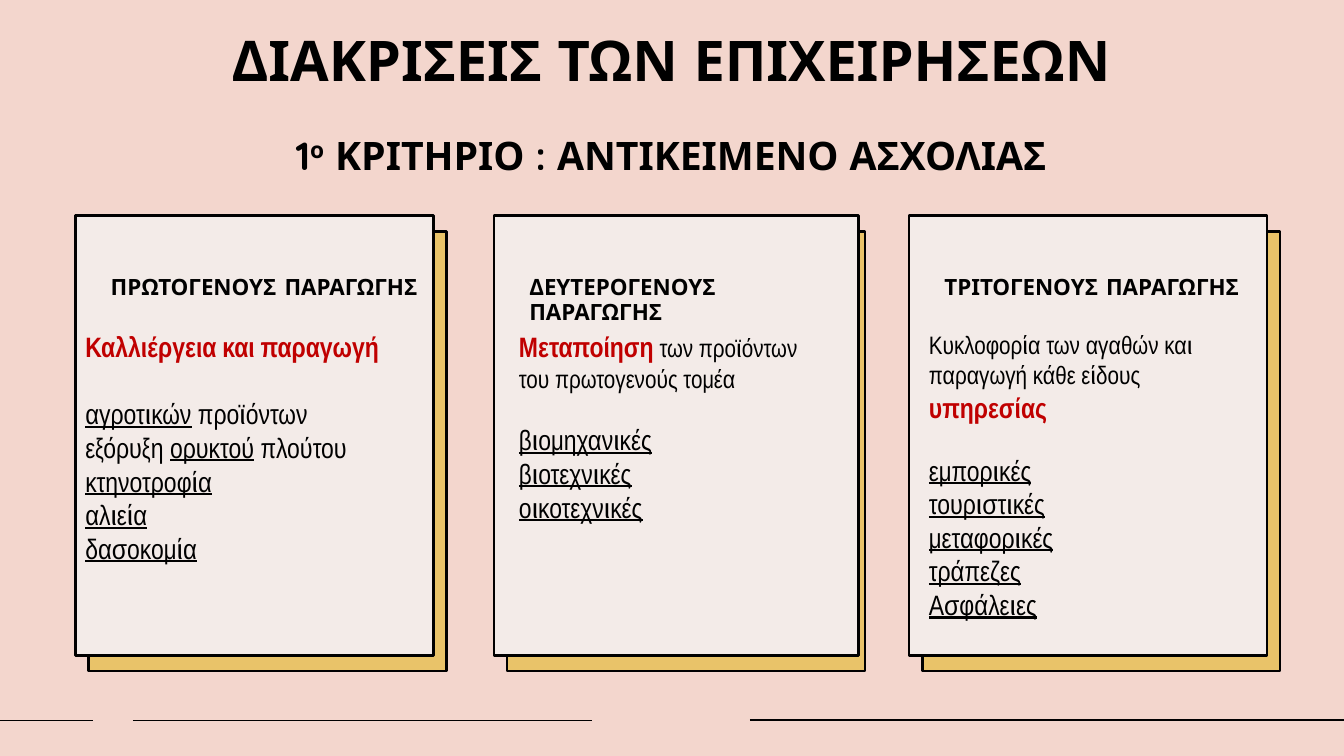
from dataclasses import dataclass

from lxml.etree import SubElement
from pptx import Presentation
from pptx.dml.color import RGBColor
from pptx.enum.shapes import MSO_CONNECTOR as Connector, MSO_SHAPE as Shape
from pptx.enum.text import MSO_ANCHOR as Anchor, PP_ALIGN as Align
from pptx.oxml.ns import qn
from pptx.util import Cm, Pt


@dataclass(frozen=True)
class Theme:
    background: str = "F3D6CD"
    panel: str = "F3EBE8"
    backing: str = "E9C369"
    ink: str = "000000"
    accent: str = "C00000"
    heading_font: str = "Quicksand"
    body_font: str = "Arial Narrow"
    title_size: int = 40
    criterion_size: int = 28
    heading_size: int = 16
    space_size: int = 20
    large: int = 20
    small: int = 18
    border: int = 2
    rule: int = 1


@dataclass(frozen=True)
class Span:
    text: str
    size: int
    color: str
    font: str
    bold: bool = False
    underline: bool = False
    baseline: int = 0


@dataclass(frozen=True)
class Box:
    left: float
    top: float
    width: float
    height: float

    def lengths(self) -> tuple:
        return Cm(self.left), Cm(self.top), Cm(self.width), Cm(self.height)


@dataclass(frozen=True)
class Sector:
    name: str
    backing_left: float
    panel_left: float
    panel_width: float
    body_left: float
    body_width: float
    activity: list[Span]
    examples: list[list[Span]]
    gap: int


@dataclass(frozen=True)
class Rule:
    start: float
    end: float
    height: float


THEME = Theme()


def heading(text: str, size: int, baseline: int = 0) -> Span:
    return Span(text, size, THEME.ink, THEME.heading_font, True, False, baseline)


def plain(text: str, size: int = THEME.large) -> Span:
    return Span(text, size, THEME.ink, THEME.body_font)


def key(text: str) -> Span:
    return Span(text, THEME.large, THEME.accent, THEME.body_font, bold=True)


def example(text: str) -> Span:
    return Span(text, THEME.large, THEME.ink, THEME.body_font, underline=True)


def write(paragraph, spans: list[Span]) -> None:
    for span in spans:
        run = paragraph.add_run()
        run.text = span.text
        font = run.font
        font.name = span.font
        font.size = Pt(span.size)
        font.bold = span.bold
        font.underline = span.underline
        font.color.rgb = RGBColor.from_string(span.color)
        if span.baseline:
            run._r.get_or_add_rPr().set("baseline", str(span.baseline * 1000))


def add_text(slide, box: Box, lines: list[list[Span]], align=Align.LEFT, gap: int = 0) -> None:
    frame = slide.shapes.add_textbox(*box.lengths()).text_frame
    frame.word_wrap = True
    for index, spans in enumerate(lines):
        paragraph = frame.add_paragraph() if index else frame.paragraphs[0]
        paragraph.alignment = align
        if index == 1:
            paragraph.space_before = Pt(gap)
        write(paragraph, spans)


def add_card(slide, box: Box, fill: str):
    card = slide.shapes.add_shape(Shape.RECTANGLE, *box.lengths())
    card.shadow.inherit = False
    card.fill.solid()
    card.fill.fore_color.rgb = RGBColor.from_string(fill)
    card.line.color.rgb = RGBColor.from_string(THEME.ink)
    card.line.width = Pt(THEME.border)
    return card


def add_rule(slide, rule: Rule) -> None:
    line = slide.shapes.add_connector(
        Connector.STRAIGHT, Cm(rule.start), Cm(rule.height), Cm(rule.end), Cm(rule.height))
    line.line.color.rgb = RGBColor.from_string(THEME.ink)
    line.line.width = Pt(THEME.rule)
    SubElement(line._element.spPr, qn("a:effectLst"))


def add_sector(slide, sector: Sector) -> None:
    add_card(slide, Box(sector.backing_left, 5.84, 9.02, 11.07), THEME.backing)
    panel = add_card(slide, Box(sector.panel_left, 5.44, sector.panel_width, 11.07), THEME.panel)
    frame = panel.text_frame
    frame.word_wrap = True
    frame.vertical_anchor = Anchor.TOP
    frame.margin_left, frame.margin_top = Cm(0.89), Cm(1.4)
    frame.margin_right, frame.margin_bottom = Cm(0.25), Cm(0.13)
    title = frame.paragraphs[0]
    title.alignment = Align.LEFT
    title.line_spacing = 0.9
    write(title, [heading(sector.name, THEME.heading_size),
                  heading(" ", THEME.space_size),
                  heading("ΠΑΡΑΓΩΓΗΣ", THEME.heading_size)])
    add_text(slide, Box(sector.body_left, 8.18, sector.body_width, 7.75),
             [sector.activity, *sector.examples], gap=sector.gap)


RULES = [Rule(0, 2.34, 18.16), Rule(3.35, 14.91, 18.16), Rule(18.9, 33.87, 18.14)]

SECTORS = [
    Sector("ΠΡΩΤΟΓΕΝΟΥΣ", 2.24, 1.9, 9.02, 1.9, 9.27,
           [key("Καλλιέργεια"), plain(" ", THEME.small), key("και"),
            plain(" ", THEME.small), key("παραγωγή")],
           [[example("αγροτικών"), plain(" προϊόντων")],
            [plain("εξόρυξη "), example("ορυκτού"), plain(" πλούτου")],
            *[[example(name)] for name in ("κτηνοτροφία", "αλιεία", "δασοκομία")]],
           24),
    Sector("ΔΕΥΤΕΡΟΓΕΝΟΥΣ", 12.78, 12.45, 9.19, 12.83, 8.38,
           [key("Μεταποίηση"),
            plain(" των προϊόντων του πρωτογενούς τομέα", THEME.small)],
           [[example(name)] for name in ("βιομηχανικές", "βιοτεχνικές", "οικοτεχνικές")],
           21),
    Sector("ΤΡΙΤΟΓΕΝΟΥΣ", 23.24, 22.91, 9.02, 23.16, 8.43,
           [plain("Κυκλοφορία των αγαθών και παραγωγή κάθε είδους ", THEME.small),
            key("υπηρεσίας")],
           [[example(name)] for name in
            ("εμπορικές", "τουριστικές", "μεταφορικές", "τράπεζες", "Ασφάλειες")],
           21),
]


def main() -> None:
    deck = Presentation()
    deck.slide_width, deck.slide_height = Cm(33.87), Cm(19.05)
    slide = deck.slides.add_slide(deck.slide_layouts[6])
    slide.background.fill.solid()
    slide.background.fill.fore_color.rgb = RGBColor.from_string(THEME.background)
    for rule in RULES:
        add_rule(slide, rule)
    add_text(slide, Box(3.15, 0.51, 27.53, 2.24),
             [[heading("ΔΙΑΚΡΙΣΕΙΣ ΤΩΝ ΕΠΙΧΕΙΡΗΣΕΩΝ", THEME.title_size)]], Align.CENTER)
    for sector in SECTORS:
        add_sector(slide, sector)
    add_text(slide, Box(3.15, 3.18, 27.53, 1.8),
             [[heading("1", THEME.criterion_size),
               heading("ο", THEME.criterion_size, 30),
               heading(" ΚΡΙΤΗΡΙΟ : ΑΝΤΙΚΕΙΜΕΝΟ ΑΣΧΟΛΙΑΣ", THEME.criterion_size)]],
             Align.CENTER)
    deck.save("out.pptx")


if __name__ == "__main__":
    main()
